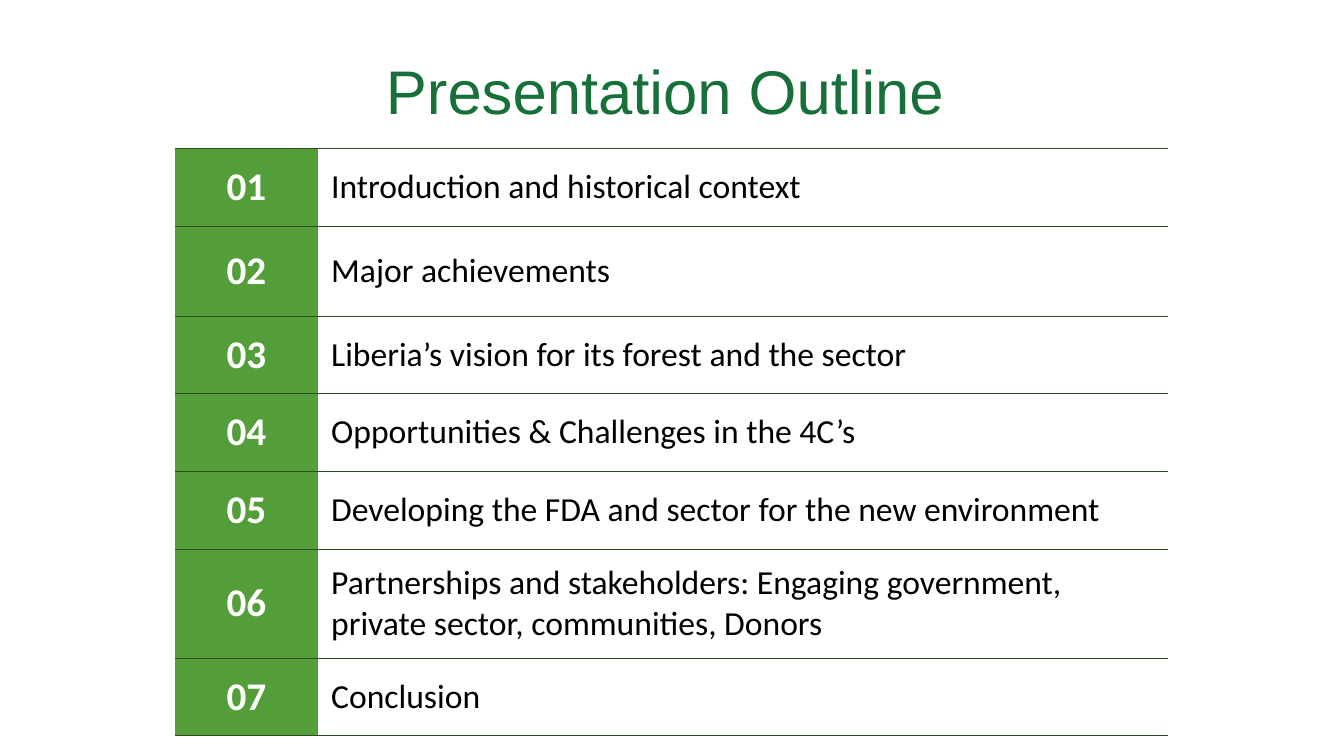
from dataclasses import dataclass

from lxml.etree import SubElement
from pptx import Presentation
from pptx.dml.color import RGBColor
from pptx.enum.text import MSO_ANCHOR, PP_ALIGN
from pptx.oxml.ns import qn
from pptx.slide import Slide
from pptx.table import _Cell
from pptx.text.text import _Paragraph
from pptx.util import Pt


@dataclass(frozen=True)
class Theme:
    title_color: str = "17703A"
    number_fill: str = "549E39"
    number_color: str = "FFFFFF"
    topic_color: str = "000000"
    rule_color: str = "2A4F1C"
    title_font: str = "Arial"
    body_font: str = "Calibri"
    title_size: float = 44
    number_size: float = 28
    topic_size: float = 24
    rule_width: float = 0.5
    cell_inset: float = 9.6


@dataclass(frozen=True)
class OutlineItem:
    topic: str
    height: float = 55.5


THEME = Theme()
COLUMN_WIDTHS = (102, 607.5)
ITEMS = (
    OutlineItem("Introduction and historical context"),
    OutlineItem("Major achievements", 64.3),
    OutlineItem("Liberia’s vision for its forest and the sector"),
    OutlineItem("Opportunities & Challenges in the 4C’s"),
    OutlineItem("Developing the FDA and sector for the new environment"),
    OutlineItem(
        "Partnerships and stakeholders: Engaging government, "
        "private sector, communities, Donors",
        77.8,
    ),
    OutlineItem("Conclusion"),
)


def add_span(para: _Paragraph, text: str, font: str, size: float,
             color: str, bold: bool = False) -> None:
    span = para.add_run()
    span.text = text
    span.font.name = font
    span.font.size = Pt(size)
    span.font.bold = bold
    span.font.color.rgb = RGBColor.from_string(color)


def add_title(page: Slide, text: str) -> None:
    box = page.shapes.add_textbox(Pt(94.3), Pt(15.1), Pt(761.8), Pt(104.4))
    frame = box.text_frame
    frame.word_wrap = True
    frame.vertical_anchor = MSO_ANCHOR.MIDDLE
    para = frame.paragraphs[0]
    para.alignment = PP_ALIGN.CENTER
    para.line_spacing = 0.9
    add_span(para, text, THEME.title_font, THEME.title_size, THEME.title_color)


def set_borders(cell: _Cell) -> None:
    """Rule the top and bottom of a cell and leave its sides open."""
    properties = cell._tc.get_or_add_tcPr()
    for side in ("lnL", "lnR"):
        SubElement(SubElement(properties, qn(f"a:{side}")), qn("a:noFill"))
    for side in ("lnT", "lnB"):
        line = SubElement(properties, qn(f"a:{side}"),
                          w=str(Pt(THEME.rule_width)))
        fill = SubElement(line, qn("a:solidFill"))
        SubElement(fill, qn("a:srgbClr"), val=THEME.rule_color)


def prepare_cell(cell: _Cell) -> _Paragraph:
    cell.vertical_anchor = MSO_ANCHOR.MIDDLE
    cell.margin_left = cell.margin_right = Pt(THEME.cell_inset)
    cell.margin_top = cell.margin_bottom = Pt(THEME.cell_inset)
    set_borders(cell)
    return cell.text_frame.paragraphs[0]


def add_outline(page: Slide) -> None:
    frame = page.shapes.add_table(
        len(ITEMS), len(COLUMN_WIDTHS), Pt(125), Pt(106),
        Pt(sum(COLUMN_WIDTHS)), Pt(sum(item.height for item in ITEMS)))
    table = frame.table
    table.first_row = False
    table.horz_banding = False
    for column, width in zip(table.columns, COLUMN_WIDTHS):
        column.width = Pt(width)

    for index, item in enumerate(ITEMS):
        table.rows[index].height = Pt(item.height)

        # Number cell
        number = table.cell(index, 0)
        para = prepare_cell(number)
        number.fill.solid()
        number.fill.fore_color.rgb = RGBColor.from_string(THEME.number_fill)
        para.alignment = PP_ALIGN.CENTER
        add_span(para, f"{index + 1:02d}", THEME.body_font,
                 THEME.number_size, THEME.number_color, bold=True)

        # Topic cell
        topic = table.cell(index, 1)
        para = prepare_cell(topic)
        topic.fill.background()
        add_span(para, item.topic, THEME.body_font,
                 THEME.topic_size, THEME.topic_color)


def main() -> None:
    deck = Presentation()
    deck.slide_width, deck.slide_height = Pt(960), Pt(540)
    page = deck.slides.add_slide(deck.slide_layouts[6])
    add_title(page, "Presentation Outline")
    add_outline(page)
    deck.save("out.pptx")


if __name__ == "__main__":
    main()
